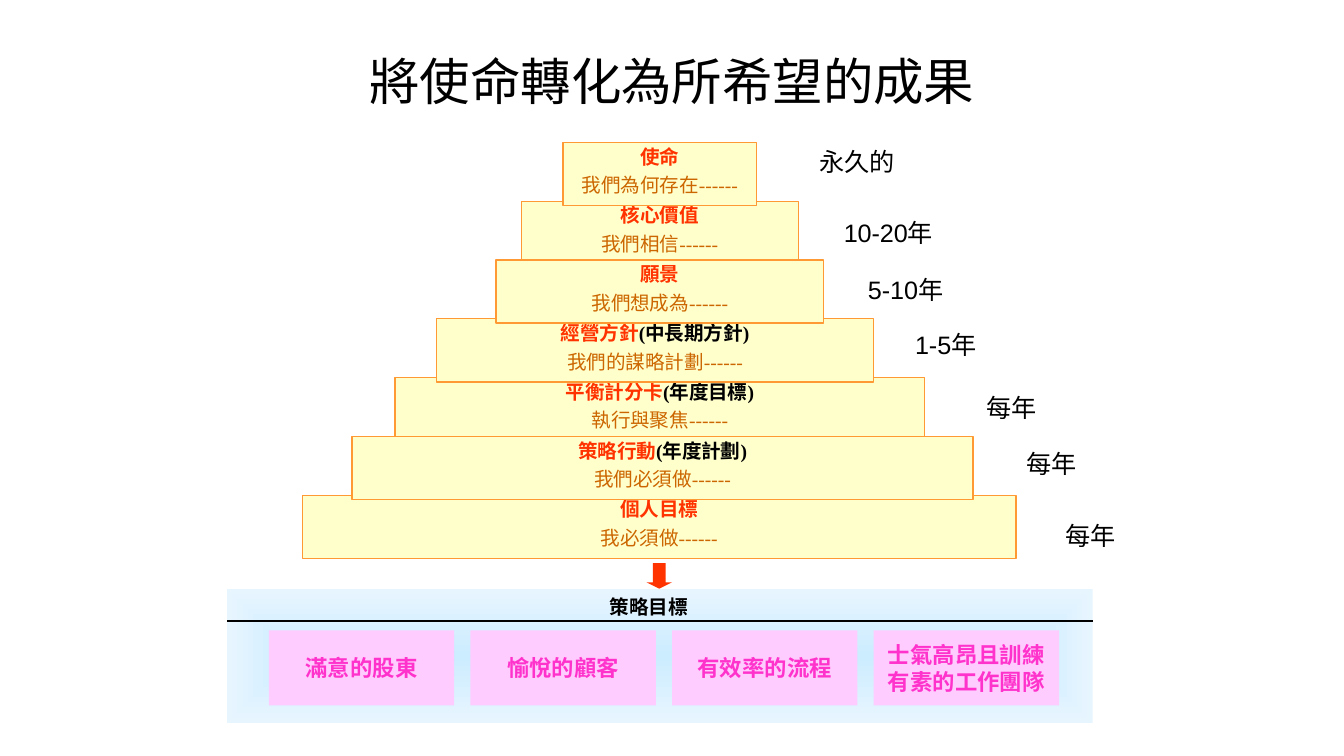
from lxml import etree
from pptx import Presentation
from pptx.dml.color import RGBColor
from pptx.enum.shapes import MSO_CONNECTOR, MSO_SHAPE
from pptx.enum.text import MSO_ANCHOR, MSO_AUTO_SIZE, PP_ALIGN
from pptx.oxml.ns import qn
from pptx.util import Inches, Pt

RECTANGLE, DOWN_ARROW = MSO_SHAPE.RECTANGLE, MSO_SHAPE.DOWN_ARROW
STRAIGHT = MSO_CONNECTOR.STRAIGHT
TOP, MIDDLE = MSO_ANCHOR.TOP, MSO_ANCHOR.MIDDLE
LEFT, CENTER = PP_ALIGN.LEFT, PP_ALIGN.CENTER
GROW, FIXED = MSO_AUTO_SIZE.SHAPE_TO_FIT_TEXT, MSO_AUTO_SIZE.NONE

COLORS = {
    "black": "000000",
    "tier": "FFFFCC",
    "tier_line": "FF9933",
    "heading": "FF3300",
    "detail": "CC6600",
    "band_center": "CCECFF",
    "band_edge": "E7F5FF",
    "outcome": "FFCCFF",
    "outcome_text": "FF33CC",
}
SERIF, SANS, CJK = "Times New Roman", "Arial", "Noto Sans CJK SC"
EAST_ASIAN = {SERIF: SANS, SANS: SANS, CJK: CJK}

# left, width, heading, note, detail
TIERS = [
    (4.19, 1.44, "使命", "", "我們為何存在------"),
    (3.88, 2.06, "核心價值", "", "我們相信------"),
    (3.69, 2.44, "願景", "", "我們想成為------"),
    (3.25, 3.25, "經營方針", "(中長期方針)", "我們的謀略計劃------"),
    (2.94, 3.94, "平衡計分卡", "(年度目標)", "執行與聚焦------"),
    (2.62, 4.62, "策略行動", "(年度計劃)", "我們必須做------"),
    (2.25, 5.31, "個人目標", "", "我必須做------"),
]
STACKING = (6, 4, 5, 3, 1, 0, 2)  # tiers from back to front
# left, top, width, text, wraps
PERIODS = [
    (6, 1.04, 1.24, "永久的", True),
    (6.18, 1.57, 1.06, "10-20年", True),
    (6.36, 1.99, 1, "5-10年", True),
    (6.71, 2.4, 0.71, "1-5年", True),
    (7.24, 2.87, 0.65, "每年", True),
    (7.54, 3.29, 0.58, "每年", False),
    (7.83, 3.82, 0.58, "每年", False),
]
OUTCOMES = [
    ["滿意的股東"],
    ["愉悅的顧客"],
    ["有效率的流程"],
    ["士氣高昂且訓練", "有素的工作團隊"],
]


def color(name):
    return RGBColor.from_string(COLORS[name])


def write(shape, paragraphs, size, font, align=LEFT, line_spacing=None,
          space_percent=0, **frame_format):
    """Fill a shape with paragraphs, each a list of (text, color, bold)."""
    frame = shape.text_frame
    for name, value in frame_format.items():
        setattr(frame, name, value)
    for index, spans in enumerate(paragraphs):
        para = frame.add_paragraph() if index else frame.paragraphs[0]
        para.alignment, para.line_spacing = align, line_spacing
        if space_percent:
            para.space_before = Pt(0)
            before = para._p.pPr.find(qn("a:spcBef"))
            before.clear()
            etree.SubElement(before, qn("a:spcPct"), val=str(space_percent * 1000))
        for text, tint, bold in spans:
            span = para.add_run()
            span.text = text
            for name, value in {"name": font, "size": Pt(size), "bold": bold}.items():
                setattr(span.font, name, value)
            span.font.color.rgb = color(tint)
            etree.SubElement(span.font._element, qn("a:ea"), typeface=EAST_ASIAN[font])


def add_block(page, kind, box, fill, line=None):
    shape = page.shapes.add_shape(kind, *map(Inches, box))
    shape.shadow.inherit = False
    shape.fill.solid()
    shape.fill.fore_color.rgb = color(fill)
    if line:
        shape.line.color.rgb = color(line)
        shape.line.width = Pt(0.75)
    else:
        shape.line.fill.background()
    return shape


def add_label(page, box, text, size, font, bold=False, wrap=True, space_percent=0):
    label = page.shapes.add_textbox(*map(Inches, box))
    write(label, [[(text, "black", bold)]], size, font,
          space_percent=space_percent, word_wrap=wrap, auto_size=GROW)


def glow_from_center(shape, center, edge):
    """Replace the fill with a rectangular gradient around the middle."""
    shape.fill.gradient()
    gradient = shape.fill._xPr.find(qn("a:gradFill"))
    for child in list(gradient):
        gradient.remove(child)
    stops = etree.SubElement(gradient, qn("a:gsLst"))
    for position, tint in ((0, center), (100000, edge)):
        stop = etree.SubElement(stops, qn("a:gs"), pos=str(position))
        etree.SubElement(stop, qn("a:srgbClr"), val=COLORS[tint])
    route = etree.SubElement(gradient, qn("a:path"), path="shape")
    etree.SubElement(route, qn("a:fillToRect"),
                     {side: "50000" for side in "ltrb"})


def add_title(page, box):
    title = page.shapes.title
    title.left, title.top, title.width, title.height = map(Inches, box)
    write(title, [[("將使命轉化為所希望的成果", "black", False)]], 27, CJK, CENTER,
          vertical_anchor=MIDDLE, auto_size=FIXED)


def add_pyramid(page, top, pitch, height):
    for index in STACKING:
        left, width, heading, note, detail = TIERS[index]
        box = (left, top + index * pitch, width, height)
        tier = add_block(page, RECTANGLE, box, "tier", "tier_line")
        first = [(heading, "heading", True)]
        if note:
            first.append((note, "black", True))
        write(tier, [first, [(detail, "detail", False)]], 10.5, SERIF, CENTER, 0.8, 50,
              word_wrap=True, auto_size=GROW, vertical_anchor=TOP)


def add_periods(page, height):
    for left, top, width, text, wrap in PERIODS:
        add_label(page, (left, top, width, height), text, 13.5, SANS,
                  wrap=wrap, space_percent=50)


def add_goals(page, box):
    """Draw the band of strategic goals with its heading, rule and outcomes."""
    left, top, width, _ = box
    band = add_block(page, RECTANGLE, box, "band_center")
    glow_from_center(band, "band_center", "band_edge")
    for index, lines in enumerate(OUTCOMES):
        place = (left + 0.31 + index * 1.5, top + 0.31, 1.38, 0.56)
        outcome = add_block(page, RECTANGLE, place, "outcome")
        write(outcome, [[(line, "outcome_text", True)] for line in lines], 12, SERIF,
              CENTER, word_wrap=False, vertical_anchor=MIDDLE)
    add_label(page, (left + 2.75, top, 0.79, 0.28), "策略目標", 10.5, SERIF,
              bold=True, wrap=False)
    level = top + 0.24
    rule = page.shapes.add_connector(
        STRAIGHT, *map(Inches, (left, level, left + width, level)))
    rule.line.color.rgb = color("black")
    rule.line.width = Pt(0.75)
    etree.SubElement(rule._element.spPr, qn("a:effectLst"))


def add_arrow(page, box):
    arrow = add_block(page, DOWN_ARROW, box, "heading")
    arrow.adjustments[0], arrow.adjustments[1] = 0.5, 0.25


def main():
    deck = Presentation()
    deck.slide_width = Inches(10)
    deck.slide_height = deck.slide_width * 9 // 16
    page = deck.slides.add_slide(deck.slide_layouts[5])
    add_title(page, (1.81, 0.25, 6.38, 0.69))
    add_goals(page, (1.69, 4.38, 6.44, 1))
    add_pyramid(page, 1.06, 7 / 16, 0.47)
    add_arrow(page, (4.81, 4.19, 0.19, 0.19))
    add_periods(page, 0.33)
    deck.save("out.pptx")


if __name__ == "__main__":
    main()
